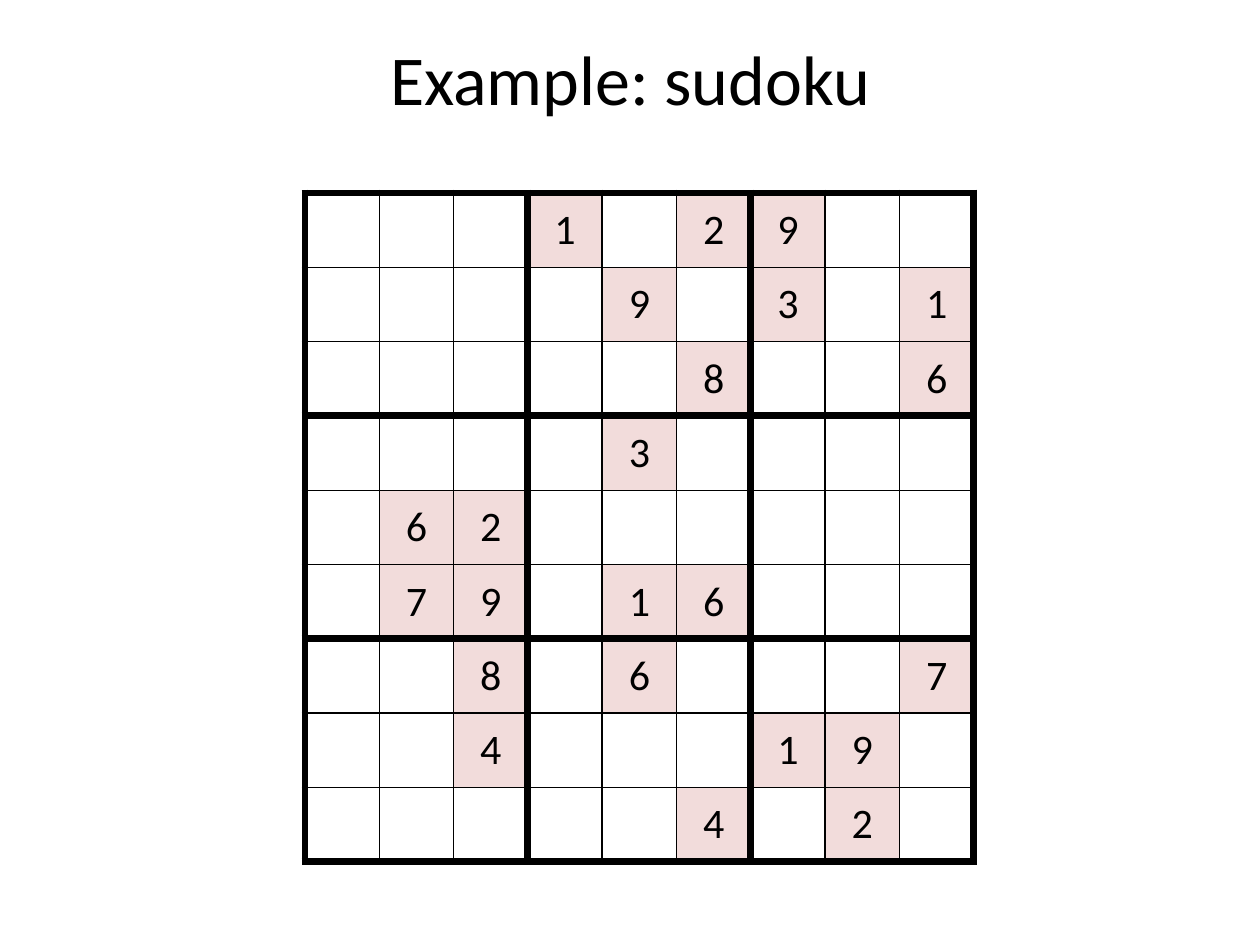
from dataclasses import dataclass

from lxml import etree
from pptx import Presentation
from pptx.dml.color import RGBColor
from pptx.enum.text import MSO_ANCHOR, PP_ALIGN
from pptx.oxml.ns import qn
from pptx.util import Pt

CENTER = PP_ALIGN.CENTER
MIDDLE = MSO_ANCHOR.MIDDLE

TITLE = "Example: sudoku"
PUZZLE = [
    "...1.29..",
    "....9.3.1",
    ".....8..6",
    "....3....",
    ".62......",
    ".79.16...",
    "..8.6...7",
    "..4...19.",
    ".....4.2.",
]
EMPTY = "."
BLOCK = 3


@dataclass(frozen=True)
class Theme:
    font: str = "Calibri"
    ink: str = "000000"
    blank: str = "FFFFFF"
    given: str = "F2DCDB"
    title_size: int = 40
    digit_size: int = 24
    thin: float = 1
    thick: float = 4.5


THEME = Theme()
PX = 914400 // 126
SLIDE_SIZE = (1260, 945)
TITLE_BOX = (63, 33, 1134, 89)
GRID_BOX = (305, 193, 669, 669)


def scaled(lengths):
    return [length * PX for length in lengths]


def write(frame, text, size):
    para = frame.paragraphs[0]
    para.alignment = CENTER
    span = para.add_run()
    span.text = text
    span.font.name = THEME.font
    span.font.size = Pt(size)
    span.font.color.rgb = RGBColor.from_string(THEME.ink)


def add_title(page):
    title = page.shapes.title
    title.left, title.top, title.width, title.height = scaled(TITLE_BOX)
    title.text_frame.vertical_anchor = MIDDLE
    write(title.text_frame, TITLE, THEME.title_size)


def set_borders(cell, row, column):
    edges = {"lnL": column, "lnR": column + 1, "lnT": row, "lnB": row + 1}
    properties = cell._tc.get_or_add_tcPr()
    for position, (side, edge) in enumerate(edges.items()):
        weight = THEME.thin if edge % BLOCK else THEME.thick
        line = etree.Element(qn(f"a:{side}"), w=str(Pt(weight)))
        fill = etree.SubElement(line, qn("a:solidFill"))
        etree.SubElement(fill, qn("a:srgbClr"), val=THEME.ink)
        properties.insert(position, line)


def add_grid(page):
    count = len(PUZZLE)
    left, top, width, height = scaled(GRID_BOX)
    grid = page.shapes.add_table(count, count, left, top, width, height).table
    grid.first_row = False
    grid.horz_banding = False
    for row, digits in enumerate(PUZZLE):
        for column, digit in enumerate(digits):
            cell = grid.cell(row, column)
            cell.vertical_anchor = MIDDLE
            cell.fill.solid()
            color = THEME.blank if digit == EMPTY else THEME.given
            cell.fill.fore_color.rgb = RGBColor.from_string(color)
            set_borders(cell, row, column)
            if digit != EMPTY:
                write(cell.text_frame, digit, THEME.digit_size)


def main():
    deck = Presentation()
    deck.slide_width, deck.slide_height = scaled(SLIDE_SIZE)
    page = deck.slides.add_slide(deck.slide_layouts[5])
    add_title(page)
    add_grid(page)
    deck.save("out.pptx")


if __name__ == "__main__":
    main()
